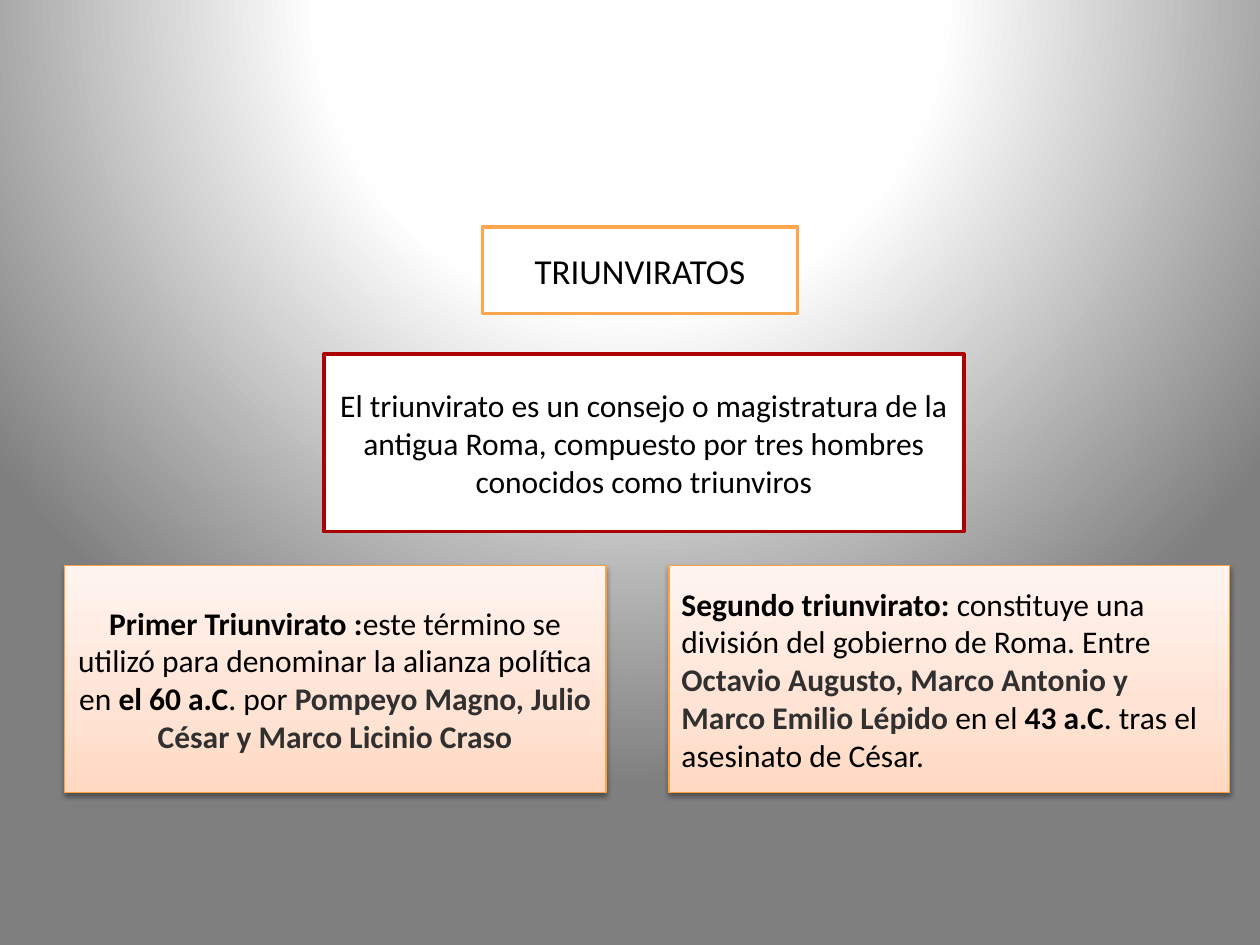
from lxml import etree
from pptx import Presentation
from pptx.dml.color import RGBColor
from pptx.enum.shapes import MSO_SHAPE
from pptx.enum.text import MSO_ANCHOR, PP_ALIGN
from pptx.oxml import parse_xml
from pptx.oxml.ns import nsdecls, qn
from pptx.util import Inches, Pt

RECTANGLE = MSO_SHAPE.RECTANGLE
MIDDLE = MSO_ANCHOR.MIDDLE
CENTER, LEFT = PP_ALIGN.CENTER, PP_ALIGN.LEFT

FONT = "Calibri"
COLORS = {
    "white": "FFFFFF", "near_white": "FEFEFE", "gray": "7F7F7F",
    "text": "000000", "names": "303030",
    "title_line": "FFA54B", "definition_line": "AD0101", "card_line": "FEA145",
    "peach": "FFD8C1", "light_peach": "FFE3D4", "cream": "FFF4EF",
}
BACKGROUND_STOPS = [(0, "white"), (40, "near_white"), (100, "gray")]
BACKGROUND_PATH = ('<a:path path="circle"><a:fillToRect l="50000" t="-80000" '
                   'r="50000" b="180000"/></a:path>')
CARD_STOPS = [(0, "peach"), (35, "light_peach"), (100, "cream")]
CARD_DIRECTION = '<a:lin ang="16200000" scaled="0"/>'

# Each span is (text, bold, color).
FIRST = [
    ("Primer Triunvirato :", True, "text"),
    ("este término se utilizó para denominar la alianza política en ", False, "text"),
    ("el 60 a.C", True, "text"),
    (". por ", False, "text"),
    ("Pompeyo Magno, Julio César y Marco Licinio Craso", True, "names"),
]
SECOND = [
    ("Segundo triunvirato:", True, "text"),
    (" constituye una división del gobierno de Roma. Entre ", False, "text"),
    ("Octavio Augusto, Marco Antonio y Marco Emilio Lépido ", True, "names"),
    ("en el ", False, "text"),
    ("43 a.C", True, "text"),
    (". tras el asesinato de César.", False, "text"),
]
DEFINITION = ("El triunvirato es un consejo o magistratura de la antigua Roma, "
              "compuesto por tres hombres conocidos como triunviros")


def rgb(name):
    return RGBColor.from_string(COLORS[name])


def set_gradient(fill, element, stops, direction):
    """Give the fill, held in element, these color stops and direction."""
    fill.gradient()
    stop_xml = "".join(
        f'<a:gs pos="{position * 1000}"><a:srgbClr val="{COLORS[name]}"/></a:gs>'
        for position, name in stops)
    gradient = parse_xml(f'<a:gradFill {nsdecls("a")} rotWithShape="1">'
                         f'<a:gsLst>{stop_xml}</a:gsLst>{direction}</a:gradFill>')
    current = element.find(".//" + qn("a:gradFill"))
    current.getparent().replace(current, gradient)


def add_shadow(shape):
    effects = shape._element.spPr.find(qn("a:effectLst"))
    shadow = etree.SubElement(
        effects, qn("a:outerShdw"), blurRad=str(Pt(3.1)), dist=str(Pt(1.6)),
        dir="5400000", rotWithShape="0")
    color = etree.SubElement(shadow, qn("a:srgbClr"), val=COLORS["text"])
    etree.SubElement(color, qn("a:alpha"), val="38000")


def add_text_box(page, box, spans, line, line_width, size=18, align=CENTER):
    shape = page.shapes.add_shape(RECTANGLE, *map(Inches, box))
    shape.shadow.inherit = False
    shape.fill.solid()
    shape.fill.fore_color.rgb = rgb("white")
    shape.line.color.rgb = rgb(line)
    shape.line.width = Pt(line_width)
    frame = shape.text_frame
    frame.word_wrap = True
    frame.vertical_anchor = MIDDLE
    para = frame.paragraphs[0]
    para.alignment = align
    para.font.name = FONT
    para.font.size = Pt(size)
    for text, bold, color in spans:
        span = para.add_run()
        span.text = text
        span.font.bold = bold
        span.font.color.rgb = rgb(color)
    return shape


def add_card(page, box, spans, align):
    card = add_text_box(page, box, spans, "card_line", 0.75, align=align)
    set_gradient(card.fill, card._element, CARD_STOPS, CARD_DIRECTION)
    add_shadow(card)


def build_triumvirate_slide(deck):
    page = deck.slides.add_slide(deck.slide_layouts[6])
    set_gradient(page.background.fill, page._element, BACKGROUND_STOPS, BACKGROUND_PATH)
    add_text_box(page, (3.83, 1.8, 2.5, 0.69), [("TRIUNVIRATOS", False, "text")],
                 "title_line", 2, size=20)
    add_text_box(page, (2.57, 2.81, 5.08, 1.41), [(DEFINITION, False, "text")],
                 "definition_line", 2)
    add_card(page, (0.51, 4.49, 4.3, 1.8), FIRST, CENTER)
    add_card(page, (5.31, 4.49, 4.45, 1.8), SECOND, LEFT)


def main():
    deck = Presentation()
    deck.slide_width, deck.slide_height = Inches(10), Inches(7.5)
    build_triumvirate_slide(deck)
    deck.save("out.pptx")


if __name__ == "__main__":
    main()
